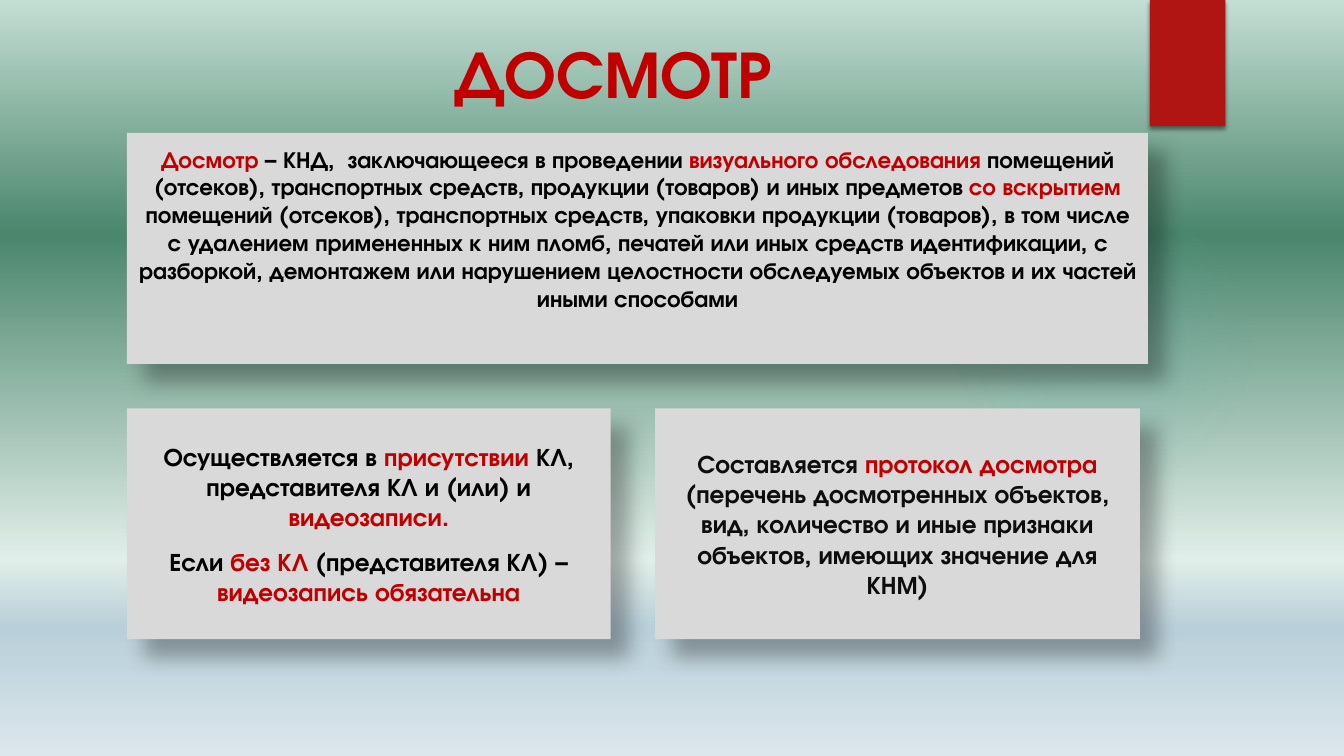
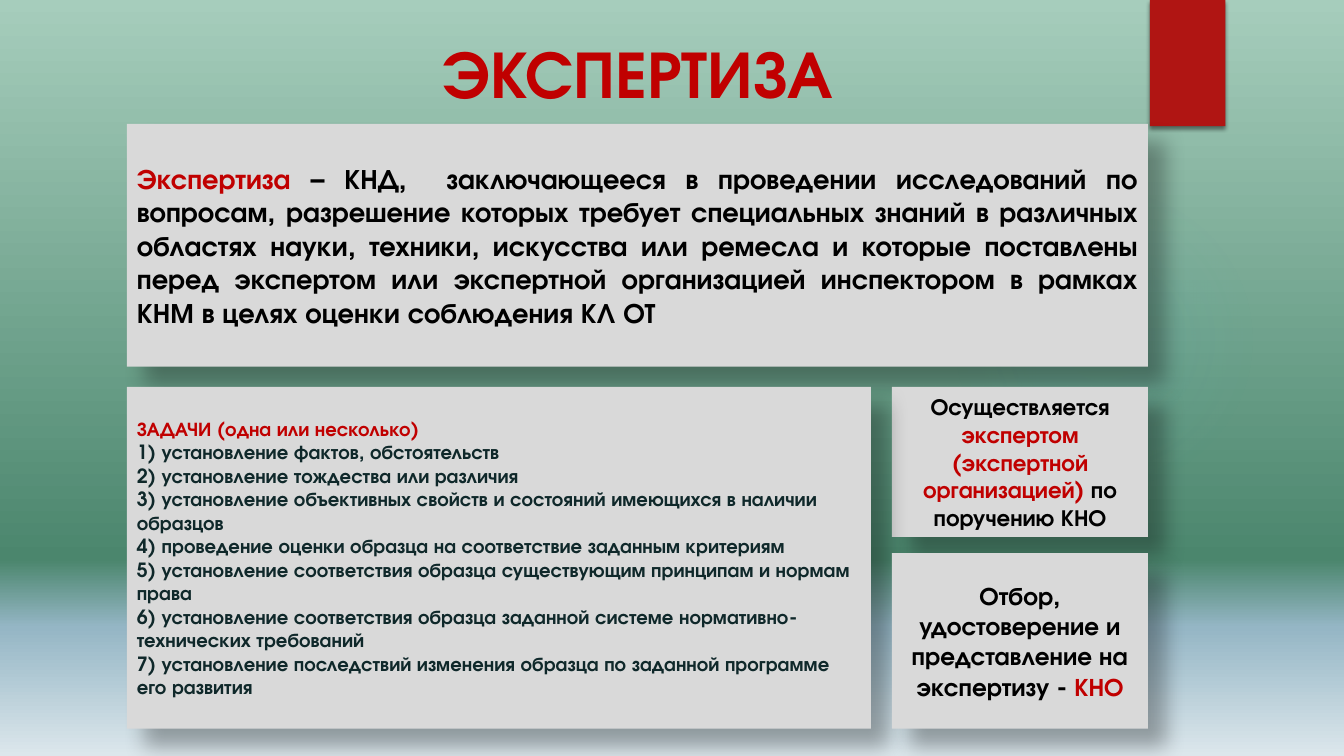
from lxml import etree
from pptx import Presentation
from pptx.dml.color import RGBColor
from pptx.enum.shapes import MSO_SHAPE as Preset
from pptx.enum.text import MSO_ANCHOR as Anchor, MSO_AUTO_SIZE as AutoSize, PP_ALIGN as Align
from pptx.oxml.ns import qn
from pptx.util import Cm, Pt

COLORS = {
    "red": "C00000", "tab": "B01513", "panel": "D9D9D9", "glow": "50B9C1",
    "black": "000000", "soft_black": "0D0D0D", "dark_teal": "0F282A",
}
FONT = "TeX Gyre Adventor"
LEFT, FULL_WIDTH = 3.2, 25.73
SIDE_LEFT, SIDE_WIDTH = 22.48, 6.45


def set_gradient(fill, element, stops, angle=None):
    """Stops are (position %, colour, opacity %); no angle means circular."""
    fill.gradient()
    gradient = next(element.iter(qn("a:gradFill")))
    for child in list(gradient):
        gradient.remove(child)
    stop_list = etree.SubElement(gradient, qn("a:gsLst"))
    for position, color, opacity in stops:
        stop = etree.SubElement(stop_list, qn("a:gs"), pos=str(position * 1000))
        rgb = etree.SubElement(stop, qn("a:srgbClr"), val=color)
        if opacity < 100:
            etree.SubElement(rgb, qn("a:alpha"), val=str(opacity * 1000))
    if angle is None:
        path = etree.SubElement(gradient, qn("a:path"), path="circle")
        etree.SubElement(path, qn("a:fillToRect"), l="50000", t="50000", r="50000", b="50000")
    else:
        etree.SubElement(gradient, qn("a:lin"), ang=str(angle * 60000), scaled="0")


def add_block(slide, preset, box, color, shadow=None):
    """Borderless shape; shadow is (opacity %, blur pt, distance pt, angle)."""
    shape = slide.shapes.add_shape(preset, *map(Cm, box))
    shape.fill.solid()
    shape.fill.fore_color.rgb = RGBColor.from_string(color)
    shape.line.fill.background()
    shape.shadow.inherit = False
    if shadow:
        opacity, blur, distance, angle = shadow
        effects = shape.element.spPr.find(qn("a:effectLst"))
        outer = etree.SubElement(
            effects, qn("a:outerShdw"), blurRad=str(Pt(blur)), dist=str(Pt(distance)),
            dir=str(angle * 60000), algn="tl", rotWithShape="0")
        rgb = etree.SubElement(outer, qn("a:srgbClr"), val=COLORS["black"])
        etree.SubElement(rgb, qn("a:alpha"), val=str(opacity * 1000))
    return shape


# Slide content: panels are (box, size, colour, alignment, space before,
# bottom inset, paragraphs); words between asterisks are red
SLIDES = [
    {
        "title": "ДОСМОТР",
        "title_width": 24.51,
        "background": [(0, "C3DED3"), (31, "4B866D"), (74, "E1EEE9"), (83, "B9CFD9"), (100, "DCE7EC")],
        "panels": [
            ((LEFT, 3.35, FULL_WIDTH, 5.82), 16.6, "black", Align.CENTER, 10, 1.13, [
                "*Досмотр* – КНД,  заключающееся в проведении *визуального обследования "
                "*помещений (отсеков), транспортных средств, продукции (товаров) и иных "
                "предметов *со вскрытием* помещений (отсеков), транспортных средств, упаковки "
                "продукции (товаров), в том числе с удалением примененных к ним пломб, печатей "
                "или иных средств идентификации, с разборкой, демонтажем или нарушением "
                "целостности обследуемых объектов и их частей иными способами"]),
            ((LEFT, 10.29, 12.19, 5.82), 18, "black", Align.CENTER, 10, 0.13, [
                "Осуществляется в *присутствии* КЛ, представителя КЛ и (или) и *видеозаписи.*",
                "Если *без КЛ *(представителя КЛ) – *видеозапись обязательна*"]),
            ((16.51, 10.29, 12.22, 5.82), 18, "soft_black", Align.CENTER, 10, 0.13, [
                "Составляется *протокол досмотра *(перечень досмотренных объектов, вид, "
                "количество и иные признаки объектов, имеющих значение для КНМ)"]),
        ],
    },
    {
        "title": "ЭКСПЕРТИЗА",
        "title_width": FULL_WIDTH,
        "background": [(0, "A6CDBC"), (74, "4B866D"), (83, "95B6C5"), (100, "DCE7EC")],
        "panels": [
            ((LEFT, 3.12, FULL_WIDTH, 6.12), 20, "black", Align.JUSTIFY, 10, 0.13, [
                "*Экспертиза *– КНД,  заключающееся в проведении исследований по вопросам, "
                "разрешение которых требует специальных знаний в различных областях науки, "
                "техники, искусства или ремесла и которые поставлены перед экспертом или "
                "экспертной организацией инспектором в рамках КНМ в целях оценки соблюдения КЛ ОТ"]),
            ((SIDE_LEFT, 9.75, SIDE_WIDTH, 3.78), 16.6, "black", Align.CENTER, 10, 0.13, [
                "Осуществляется *экспертом (экспертной организацией) *по поручению КНО"]),
            ((LEFT, 9.75, 18.75, 8.61), 14, "dark_teal", Align.LEFT, 0, 0.13, [
                "*ЗАДАЧИ (одна или несколько)*",
                "1) установление фактов, обстоятельств",
                "2) установление тождества или различия",
                "3) установление объективных свойств и состояний имеющихся в наличии образцов",
                "4) проведение оценки образца на соответствие заданным критериям",
                "5) установление соответствия образца существующим принципам и нормам права",
                "6) установление соответствия образца заданной системе нормативно-технических требований",
                "7) установление последствий изменения образца по заданной программе его развития"]),
            ((SIDE_LEFT, 13.94, SIDE_WIDTH, 4.42), 18, "black", Align.CENTER, 10, 0.13, [
                "Отбор, удостоверение и представление на экспертизу - *КНО*"]),
        ],
    },
]

presentation = Presentation()
presentation.slide_width, presentation.slide_height = Cm(33.87), Cm(19.05)
layout = presentation.slide_layouts[5]

for content in SLIDES:
    slide = presentation.slides.add_slide(layout)
    stops = [(position, color, 100) for position, color in content["background"]]
    set_gradient(slide.background.fill, slide.element, stops, angle=90)

    # Title
    title = slide.shapes.title
    title.left, title.top = Cm(LEFT), Cm(0.66)
    title.width, title.height = Cm(content["title_width"]), Cm(3.58)
    title.text_frame.text = content["title"]
    title.text_frame.vertical_anchor = Anchor.TOP
    title.text_frame.auto_size = AutoSize.NONE
    paragraph = title.text_frame.paragraphs[0]
    paragraph.alignment = Align.CENTER
    paragraph.font.name, paragraph.font.size, paragraph.font.bold = FONT, Pt(48), True
    paragraph.font.color.rgb = RGBColor.from_string(COLORS["red"])

    # Text panels
    for box, size, color, alignment, space_before, bottom_inset, texts in content["panels"]:
        panel = add_block(slide, Preset.RECTANGLE, box, COLORS["panel"], (30, 15, 18, 45))
        frame = panel.text_frame
        frame.word_wrap = True
        frame.vertical_anchor = Anchor.MIDDLE
        frame.margin_bottom = Cm(bottom_inset)
        for index, text in enumerate(texts):
            paragraph = frame.add_paragraph() if index else frame.paragraphs[0]
            paragraph.alignment = alignment
            if index:
                paragraph.space_before = Pt(space_before)
            paragraph.font.name, paragraph.font.size, paragraph.font.bold = FONT, Pt(size), True
            for part, words in enumerate(text.split("*")):
                if words:
                    run = paragraph.add_run()
                    run.text = words
                    run.font.color.rgb = RGBColor.from_string(COLORS["red" if part % 2 else color])

# Shared decoration: drawn once, then moved to the layout
glow = add_block(slide, Preset.OVAL, (23.9, 4.65, 7.82, 7.82), COLORS["glow"])
set_gradient(glow.fill, glow.element,
             [(0, COLORS["glow"], 7), (36, COLORS["glow"], 6), (69, COLORS["glow"], 0)])
tab = add_block(slide, Preset.RECTANGLE, (28.98, 0, 1.9, 3.18), COLORS["tab"], (45, 3, 2, 90))
for shape in (glow, tab):
    layout.shapes.element.append(shape.element)

presentation.save("out.pptx")
